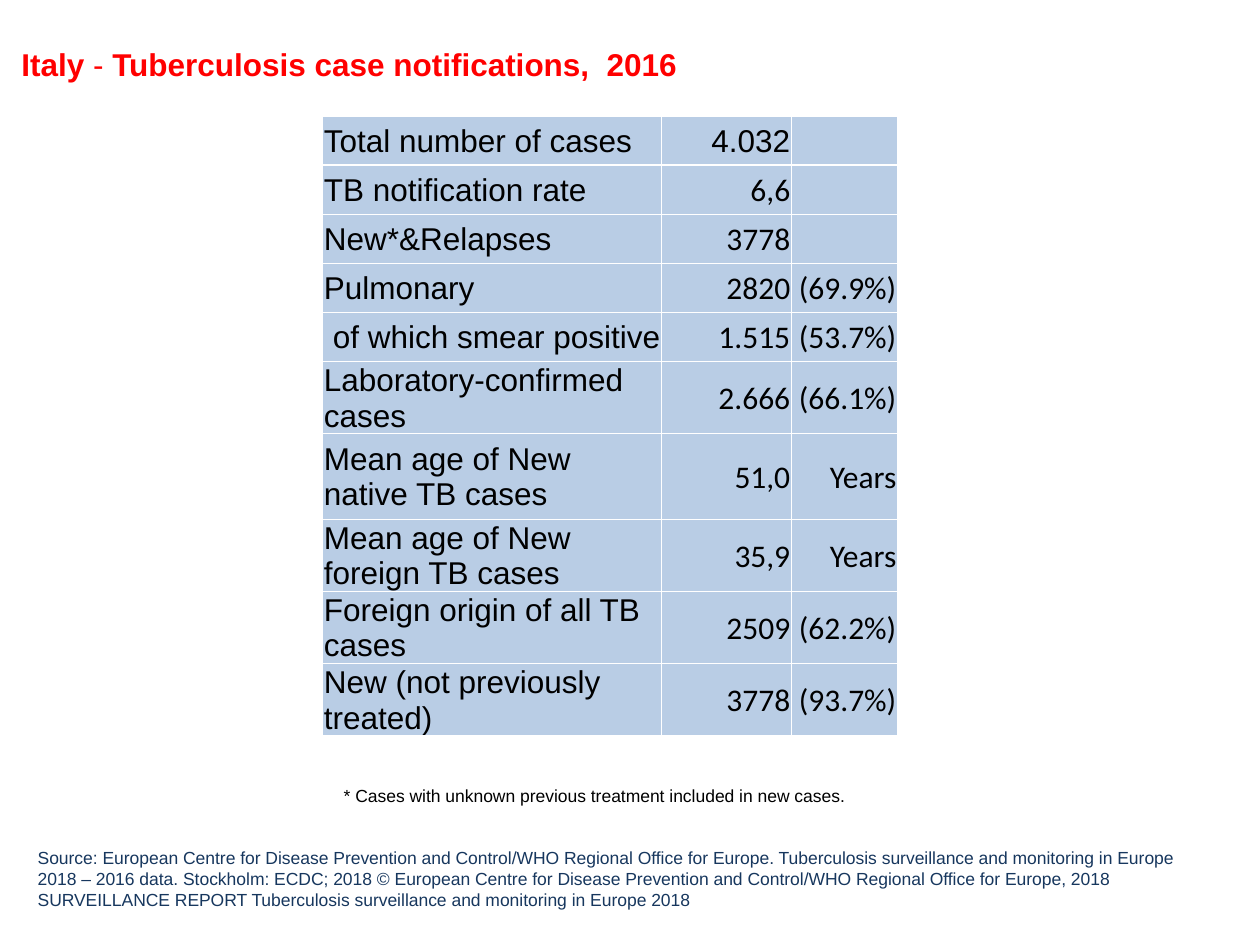
from lxml import etree
from pptx import Presentation, util as u
from pptx.dml import color
from pptx.enum import text
from pptx.oxml import ns

CASES = [
    ("Total number of cases", "4.032", ""),
    ("TB notification rate", "6,6", ""),
    ("New*&Relapses", "3778", ""),
    ("Pulmonary", "2820", "(69.9%)"),
    ("of which smear positive", "1.515", "(53.7%)"),
    ("Laboratory-confirmed cases", "2.666", "(66.1%)"),
    ("Mean age of New native TB cases", "51,0", "Years"),
    ("Mean age of New foreign TB cases", "35,9", "Years"),
    ("Foreign origin of all TB cases", "2509", "(62.2%)"),
    ("New (not previously treated)", "3778", "(93.7%)"),
]
SUBROW = "of which smear positive"
COLUMN_WIDTHS = (6.84, 2.62, 2.14)
ROW_HEIGHT = 0.99
ROW_HEIGHTS = {5: 1.04, 6: 1.73}  # rows that differ from ROW_HEIGHT

SOURCE = (
    "Source: European Centre for Disease Prevention and Control/WHO Regional Office for Europe. "
    "Tuberculosis surveillance and monitoring in Europe 2018 – 2016 data. Stockholm: ECDC; 2018 "
    "© European Centre for Disease Prevention and Control/WHO Regional Office for Europe, 2018",
    "SURVEILLANCE REPORT Tuberculosis surveillance and monitoring in Europe 2018",
)


def rgb(value):
    return color.RGBColor.from_string(value)


def add_text(paragraph, content, *, font="Arial", size=18, colour="000000",
             bold=False, align=text.PP_ALIGN.LEFT):
    paragraph.alignment = align
    run = paragraph.add_run()
    run.text = content
    run.font.name = font
    run.font.size = u.Pt(size)
    run.font.bold = bold
    run.font.color.rgb = rgb(colour)


class CaseSlide:
    red = "FF0000"
    navy = "17375E"
    cell_fill = "B9CDE5"
    border = "FFFFFF"
    indent = u.Cm(0.43)

    def __init__(self, presentation):
        self.slide = presentation.slides.add_slide(presentation.slide_layouts[5])

    def title(self, parts, left, top, width, height):
        """Fill the title with (text, bold) parts."""
        shape = self.slide.shapes.title
        shape.left, shape.top = u.Cm(left), u.Cm(top)
        shape.width, shape.height = u.Cm(width), u.Cm(height)
        frame = shape.text_frame
        frame.auto_size = text.MSO_AUTO_SIZE.NONE
        frame.vertical_anchor = text.MSO_ANCHOR.BOTTOM
        frame.margin_left = self.indent
        for content, bold in parts:
            add_text(frame.paragraphs[0], content, colour=self.red, bold=bold)

    def note(self, lines, left, top, width, height, *, indent=u.Cm(0.25), colour="000000"):
        box = self.slide.shapes.add_textbox(u.Cm(left), u.Cm(top), u.Cm(width), u.Cm(height))
        frame = box.text_frame
        frame.word_wrap = True
        frame.vertical_anchor = text.MSO_ANCHOR.MIDDLE
        frame.margin_left = indent
        for index, line in enumerate(lines):
            paragraph = frame.add_paragraph() if index else frame.paragraphs[0]
            add_text(paragraph, line, size=10, colour=colour)

    def table(self, rows, left, top):
        heights = [ROW_HEIGHTS.get(index, ROW_HEIGHT) for index in range(len(rows))]
        table = self.slide.shapes.add_table(
            len(rows), len(COLUMN_WIDTHS), u.Cm(left), u.Cm(top),
            u.Cm(sum(COLUMN_WIDTHS)), u.Cm(sum(heights))).table
        table.first_row = table.horz_banding = False
        for column, width in zip(table.columns, COLUMN_WIDTHS):
            column.width = u.Cm(width)
        for row, height, values in zip(table.rows, heights, rows):
            row.height = u.Cm(height)
            for index, (cell, value) in enumerate(zip(row.cells, values)):
                self.style_cell(cell)
                if not value:
                    continue
                is_label = index == 0
                is_arial = is_label or value == rows[0][1]
                left_aligned = is_label and value != SUBROW
                add_text(cell.text_frame.paragraphs[0], value,
                         font="Arial" if is_arial else "Calibri",
                         align=text.PP_ALIGN.LEFT if left_aligned else text.PP_ALIGN.RIGHT)

    def style_cell(self, cell):
        cell.vertical_anchor = text.MSO_ANCHOR.MIDDLE
        cell.margin_left = cell.margin_right = cell.margin_top = u.Cm(0.03)
        cell.margin_bottom = 0
        properties = cell._tc.get_or_add_tcPr()
        for side in ("a:lnL", "a:lnR", "a:lnT", "a:lnB"):
            line = etree.SubElement(properties, ns.qn(side), w=str(u.Pt(1)))
            fill = etree.SubElement(line, ns.qn("a:solidFill"))
            etree.SubElement(fill, ns.qn("a:srgbClr"), val=self.border)
        cell.fill.solid()
        cell.fill.fore_color.rgb = rgb(self.cell_fill)


def main():
    presentation = Presentation()
    presentation.slide_width, presentation.slide_height = u.Cm(25.4), u.Cm(19.05)
    slide = CaseSlide(presentation)
    slide.title([("Italy", True), (" - ", False),
                 ("Tuberculosis case notifications,  2016", True)], 0, 0, 24.7, 1.8)
    slide.table(CASES, 6.5, 2.34)
    slide.note(["* Cases with unknown previous treatment included in new cases."],
               6.5, 14.75, 11.6, 2.57, indent=slide.indent)
    slide.note(SOURCE, 0.51, 16.94, 24.18, 1.55, colour=slide.navy)
    presentation.save("out.pptx")


if __name__ == "__main__":
    main()
